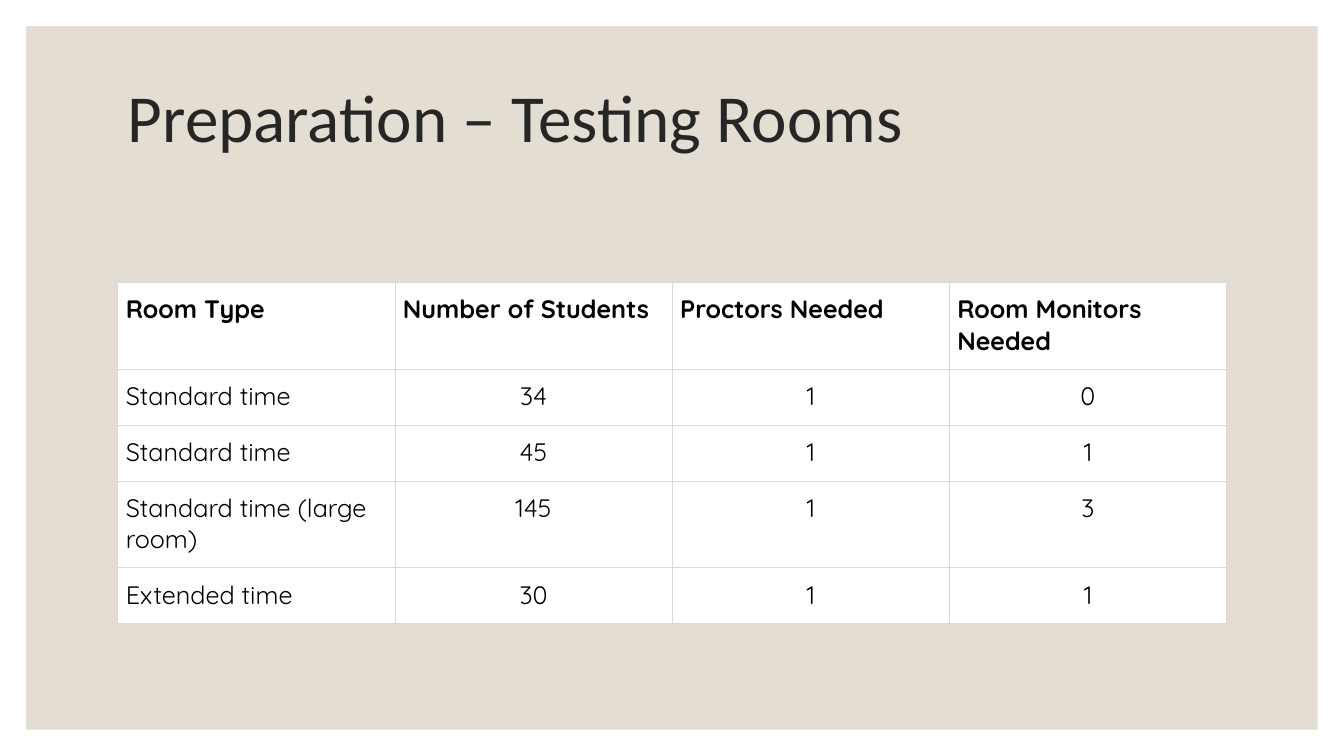
import dataclasses

import lxml.etree
import pptx
import pptx.dml.color
import pptx.enum.shapes
import pptx.enum.text
import pptx.oxml.ns
import pptx.util

Cm = pptx.util.Cm
Pt = pptx.util.Pt


@dataclasses.dataclass(frozen=True)
class Theme:
    """Colours, fonts and type sizes of the slide."""
    panel: str = "E3DED1"
    title: str = "262626"
    text: str = "000000"
    cell: str = "FFFFFF"
    border: str = "D9D9D9"
    title_font: str = "Calibri"
    body_font: str = "Quicksand"
    title_size: int = 48
    body_size: int = 18
    border_width: float = 0.75


THEME = Theme()

ROOMS = [
    ("Room Type", "Number of Students", "Proctors Needed", "Room Monitors Needed"),
    ("Standard time", "34", "1", "0"),
    ("Standard time", "45", "1", "1"),
    ("Standard time (large room)", "145", "1", "3"),
    ("Extended time", "30", "1", "1"),
]
ROW_HEIGHTS = [2.19, 1.41, 1.41, 2.19, 1.41]


def rgb(value):
    """Return a colour from its hex value."""
    return pptx.dml.color.RGBColor.from_string(value)


def add_run(paragraph, words, font, size, color, bold=False):
    """Append one formatted run to a paragraph."""
    run = paragraph.add_run()
    run.text = words
    run.font.name = font
    run.font.size = Pt(size)
    run.font.bold = bold
    run.font.color.rgb = rgb(color)


def add_panel(slide, box):
    """Lay the coloured panel behind everything else."""
    panel = slide.shapes.add_shape(pptx.enum.shapes.MSO_SHAPE.RECTANGLE, *box)
    panel.shadow.inherit = False
    panel.fill.solid()
    panel.fill.fore_color.rgb = rgb(THEME.panel)
    panel.line.fill.background()
    slide.shapes.title.element.addprevious(panel.element)


def place_title(slide, box, words):
    """Move the title placeholder into its box and fill it."""
    title = slide.shapes.title
    title.left, title.top, title.width, title.height = box
    frame = title.text_frame
    frame.word_wrap = True
    frame.auto_size = pptx.enum.text.MSO_AUTO_SIZE.NONE
    frame.vertical_anchor = pptx.enum.text.MSO_ANCHOR.MIDDLE
    heading = frame.paragraphs[0]
    heading.alignment = pptx.enum.text.PP_ALIGN.LEFT
    heading.line_spacing = 0.9
    add_run(heading, words, THEME.title_font, THEME.title_size, THEME.title)


def add_borders(cell):
    """Draw a thin line on all four sides of a cell."""
    qn = pptx.oxml.ns.qn
    properties = cell._tc.get_or_add_tcPr()
    for side in ("a:lnL", "a:lnR", "a:lnT", "a:lnB"):
        edge = lxml.etree.SubElement(properties, qn(side), w=str(Pt(THEME.border_width)))
        paint = lxml.etree.SubElement(edge, qn("a:solidFill"))
        lxml.etree.SubElement(paint, qn("a:srgbClr"), val=THEME.border)


def fill_cell(cell, words, is_header, is_centred):
    """Format one table cell and write its words."""
    add_borders(cell)
    cell.fill.solid()
    cell.fill.fore_color.rgb = rgb(THEME.cell)
    cell.margin_left = cell.margin_right = Cm(0.2)
    cell.margin_top, cell.margin_bottom = Cm(0.28), Cm(0.3)
    entry = cell.text_frame.paragraphs[0]
    align = pptx.enum.text.PP_ALIGN
    entry.alignment = align.CENTER if is_centred else align.LEFT
    add_run(entry, words, THEME.body_font, THEME.body_size, THEME.text, is_header)


def add_room_table(slide, box):
    """Build the table of testing rooms with equal columns."""
    rooms = slide.shapes.add_table(len(ROOMS), len(ROOMS[0]), *box).table
    for row, height in zip(rooms.rows, ROW_HEIGHTS):
        row.height = Cm(height)
    for r, room in enumerate(ROOMS):
        for c, words in enumerate(room):
            fill_cell(rooms.cell(r, c), words, r == 0, r > 0 and c > 0)


def build_rooms_slide(deck):
    """Add the testing rooms slide."""
    slide = deck.slides.add_slide(deck.slide_layouts[5])
    margin, left, width = Cm(0.66), Cm(2.97), Cm(27.94)
    add_panel(slide, (margin, margin, deck.slide_width - 2 * margin,
                      deck.slide_height - 2 * margin))
    place_title(slide, (left, Cm(1.78), width, Cm(2.51)), "Preparation – Testing Rooms")
    add_room_table(slide, (left, Cm(7.11), width, Cm(sum(ROW_HEIGHTS))))


def main():
    """Create the deck and save it."""
    deck = pptx.Presentation()
    deck.slide_width, deck.slide_height = Cm(33.87), Cm(19.05)
    build_rooms_slide(deck)
    deck.save("out.pptx")


if __name__ == "__main__":
    main()
